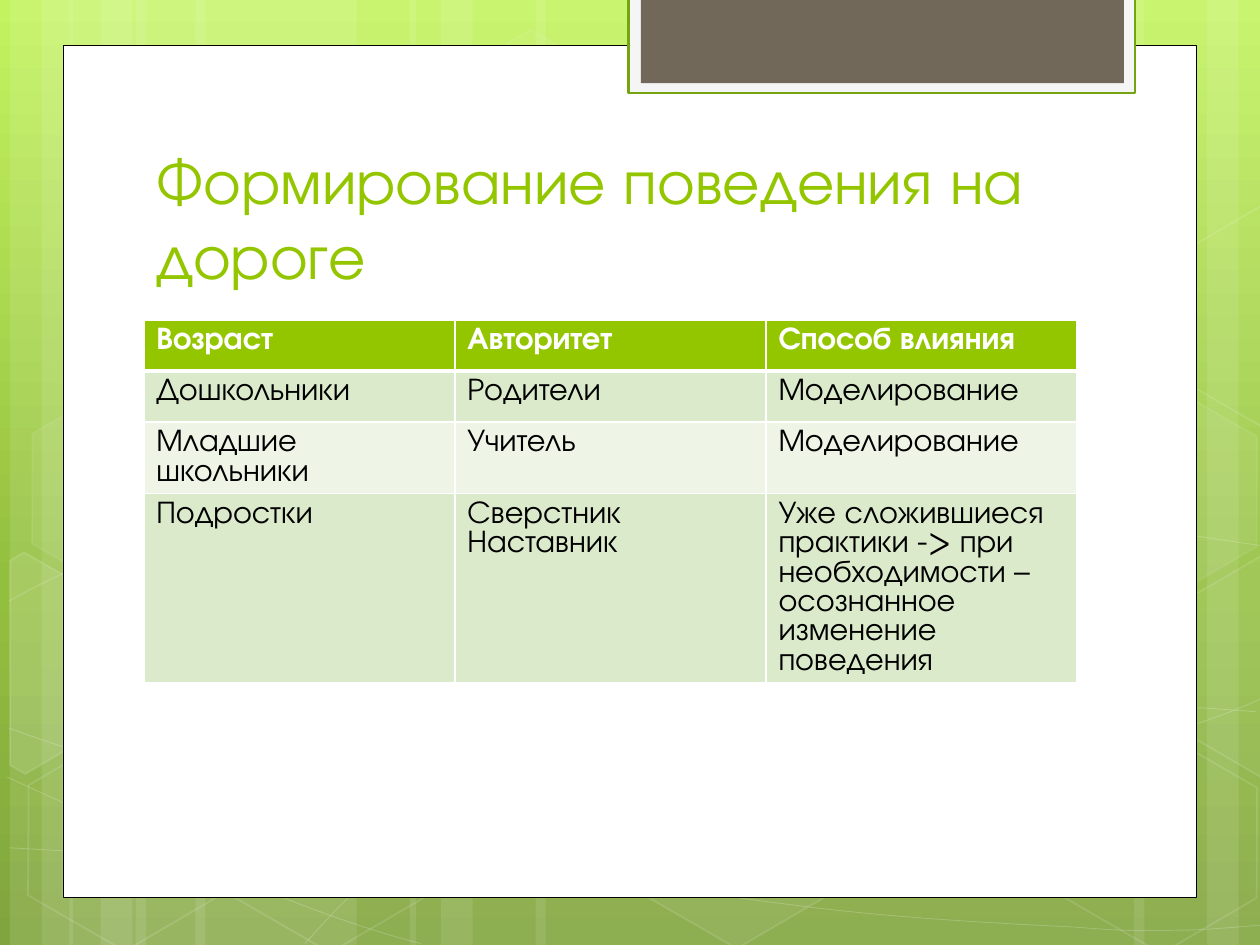
import copy
import math

import lxml.etree
import pptx
import pptx.dml.color
import pptx.enum.shapes
import pptx.enum.text
import pptx.oxml
import pptx.oxml.ns
import pptx.util

Cm = pptx.util.Cm
Pt = pptx.util.Pt
qn = pptx.oxml.ns.qn
SHAPE = pptx.enum.shapes.MSO_SHAPE
FONT = "TeX Gyre Adventor"


def paint(fill, colour, opacity=100):
    fill.solid()
    fill.fore_color.rgb = pptx.dml.color.RGBColor.from_string(colour)
    if opacity < 100:
        srgb = fill._xPr.find(".//" + qn("a:srgbClr"))
        lxml.etree.SubElement(srgb, qn("a:alpha")).set("val", str(opacity * 1000))


def style(shape, fill=None, fill_opacity=100, line=None, width=1, line_opacity=100):
    shape.shadow.inherit = False
    if fill and fill_opacity:
        paint(shape.fill, fill, fill_opacity)
    else:
        shape.fill.background()
    if line:
        shape.line.width = Pt(width)
        paint(shape.line.fill, line, line_opacity)
    else:
        shape.line.fill.background()


presentation = pptx.Presentation()
presentation.slide_width = Cm(25.4)
presentation.slide_height = Cm(19.05)
slide = presentation.slides.add_slide(presentation.slide_layouts[6])

backdrop = slide.background.fill
backdrop.gradient()
backdrop.gradient_angle = 270
stop_list = slide.element.find(".//" + qn("a:gsLst"))
stop_list.append(copy.deepcopy(stop_list[-1]))
for stop, (position, colour) in zip(
    backdrop.gradient_stops, [(0, "C3F35F"), (0.62, "93BF3F"), (1, "81A53E")]
):
    stop.position = position
    stop.color.rgb = pptx.dml.color.RGBColor.from_string(colour)

bands = [
    (2.74, 4.45), (0.2, 1.27), (0.84, 2.11), (3.94, 4.45),
    (1.4, 1.27), (2.03, 2.11), (18.62, 4.45), (24.33, 1.27),
    (22.86, 2.11), (10.8, 7.82), (8.26, 1.27), (8.89, 2.11),
]
for left, width in bands:
    band = slide.shapes.add_shape(SHAPE.RECTANGLE, Cm(left), 0, Cm(width), Cm(19.05))
    style(band, "FFFFFF", 10)

curves = [
    [(0.18, 17.09), (1.55, 17.17), (2.92, 17.25), (4.83, 17.22), (6.73, 17.2),
     (9.09, 17.15), (11.63, 16.89), (14.17, 16.64), (17.78, 16.15), (20.12, 15.67),
     (22.43, 15.19), (24.82, 14.43), (25.58, 14)],
    [(0.18, 12.12), (0.91, 11.71), (1.65, 11.33), (3.07, 10.95), (4.52, 10.57),
     (6.58, 10.01), (8.81, 9.83), (11.07, 9.65), (13.82, 9.63), (16.61, 9.83),
     (19.41, 10.03), (24.05, 10.82), (25.58, 11.02)],
    [(0.15, 15.67), (3.23, 17.07), (6.27, 18.47), (8.48, 19.02)],
    [(0.18, 14.68), (0.97, 14.96), (1.78, 15.24), (3.25, 15.65), (4.72, 16.03),
     (6.93, 16.66), (9.07, 17.09), (11.18, 17.53), (13.84, 17.98), (15.95, 18.24),
     (18.06, 18.52), (20.32, 18.62), (21.67, 18.69), (22.99, 18.8), (23.34, 18.75),
     (24, 18.75), (24.66, 18.72), (25.12, 18.67), (25.58, 18.64)],
    [(6.15, 19.02), (6.6, 18.52), (7.06, 18.01), (7.67, 17.55), (8.28, 17.09),
     (9.14, 16.61), (9.86, 16.23), (10.57, 15.88), (11, 15.72), (11.94, 15.47),
     (12.85, 15.21), (14.55, 14.86), (15.44, 14.68), (16.36, 14.5), (16.48, 14.5),
     (17.27, 14.45), (18.06, 14.38), (19.3, 14.3), (20.17, 14.27), (21.06, 14.25),
     (22.5, 14.27), (22.5, 14.27), (23.1, 14.27), (23.6, 14.27), (24.21, 14.27),
     (24.66, 14.3), (25.1, 14.33), (25.32, 14.35)],
]
for knots in curves:
    first, *rest = [(Cm(x), Cm(y)) for x, y in knots]
    builder = slide.shapes.build_freeform(*first)
    builder.add_line_segments(rest, close=False)
    curve = builder.convert_to_shape()
    segments = curve._element.findall(".//" + qn("a:lnTo"))
    outline = segments[0].getparent()
    for start in range(0, len(segments), 3):
        bend = lxml.etree.SubElement(outline, qn("a:cubicBezTo"))
        for segment in segments[start:start + 3]:
            bend.append(segment[0])
            outline.remove(segment)
    style(curve, line="FFFFFF", width=0.5, line_opacity=20)

hexagons = [
    (4, 8, (8.48, 0.91), []),
    (6, 12, (12.62, 14.96), []),
    (10, 12, (0.91, 13.59), [(0.2, 11.3), (0.48, 11.13), (2.44, 12.24),
                             (2.41, 14.48), (0.51, 15.6), (0.2, 15.42)]),
    (0, 12, (0.28, 15.01), []),
    (7, 8, (0.36, 7.92), []),
    (0, 12, (4.42, 15.04), []),
    (10, 12, (19.13, 11.51), []),
    (0, 12, (21.18, 15.06), []),
    (7, 8, (21.18, 7.98), []),
    (4, 12, (25.02, 13.21), [(23.52, 12.32), (25.43, 11.2), (25.63, 11.33),
                             (25.63, 15.57), (25.45, 15.67), (23.52, 14.55)]),
    (0, 12, (25.02, 6.12), [(23.52, 5.26), (25.43, 4.14), (25.65, 4.27),
                            (25.63, 8.51), (25.45, 8.61), (23.52, 7.49)]),
]
cosine, sine = math.cos(math.radians(30)), math.sin(math.radians(30))
for opacity, edge_opacity, (x, y), corners in hexagons:
    if corners:
        first, *rest = [
            (Cm(x + (a - x) * cosine + (b - y) * sine), Cm(y - (a - x) * sine + (b - y) * cosine))
            for a, b in corners
        ]
        builder = slide.shapes.build_freeform(*first)
        builder.add_line_segments(rest)
        hexagon = builder.convert_to_shape()
    else:
        hexagon = slide.shapes.add_shape(SHAPE.HEXAGON, Cm(x), Cm(y), Cm(4.45), Cm(3.86))
        hexagon.adjustments[0] = 0.285
    hexagon.rotation = 30
    style(hexagon, "FFFFFF", opacity, "FFFFFF", 1, edge_opacity)

panels = [
    (1.27, 0.91, 22.86, 17.19, "FFFFFF", "000000", 0.5),
    (12.67, -0.05, 10.21, 1.93, "F5F5F5", "74A510", 1.25),
    (12.92, -0.05, 9.74, 1.73, "71685A", None, 0),
]
for left, top, width, height, colour, edge, edge_width in panels:
    panel = slide.shapes.add_shape(SHAPE.RECTANGLE, Cm(left), Cm(top), Cm(width), Cm(height))
    style(panel, colour, 100, edge, edge_width)

title = slide.shapes.add_textbox(Cm(2.9), Cm(2.84), Cm(19.51), Cm(3.18)).text_frame
title.word_wrap = True
title.vertical_anchor = pptx.enum.text.MSO_ANCHOR.BOTTOM
title.paragraphs[0].line_spacing = Pt(43.2)
heading = title.paragraphs[0].add_run()
heading.text = "Формирование поведения на дороге"
heading.font.name = FONT
heading.font.size = Pt(36)
paint(heading.font.fill, "94C600")

rows = [
    [[["Возраст"]], [["Авторитет"]], [["Способ влияния"]]],
    [[["Дошкольники"]], [["Родители"]], [["Моделирование"]]],
    [[["Младшие школьники"]], [["Учитель"]], [["Моделирование"]]],
    [[["Подростки"]], [["Сверстник"], ["Наставник"]],
     [["Уже сложившиеся практики -",
       "> при необходимости – осознанное изменение поведения"]]],
]
row_heights = [1.03, 1.03, 1.43, 3.78]
row_fills = ["94C600", "DCEACC", "EEF5E7", "DCEACC"]
influence = slide.shapes.add_table(
    4, 3, Cm(2.9), Cm(6.45), Cm(18.82), Cm(sum(row_heights))
).table
for column in influence.columns:
    column.width = Cm(6.27)
for index, contents in enumerate(rows):
    influence.rows[index].height = Cm(row_heights[index])
    for cell, lines in zip(influence.rows[index].cells, contents):
        paint(cell.fill, row_fills[index])
        borders = {"L": 1, "R": 1, "T": 3 if index == 1 else 1, "B": 3 if index == 0 else 1}
        for place, (side, weight) in enumerate(borders.items()):
            border = pptx.oxml.parse_xml(
                f'<a:ln{side} {pptx.oxml.ns.nsdecls("a")} w="{Pt(weight)}">'
                '<a:solidFill><a:srgbClr val="FFFFFF"/></a:solidFill>'
                f'</a:ln{side}>'
            )
            cell._tc.tcPr.insert(place, border)
        for number, pieces in enumerate(lines):
            frame = cell.text_frame
            paragraph = frame.add_paragraph() if number else frame.paragraphs[0]
            paragraph.line_spacing = Pt(16.8)
            for piece in pieces:
                run = paragraph.add_run()
                run.text = piece
                run.font.name = FONT
                run.font.size = Pt(18)
                run.font.bold = index == 0
                paint(run.font.fill, "FFFFFF" if index == 0 else "000000")

presentation.save("out.pptx")
